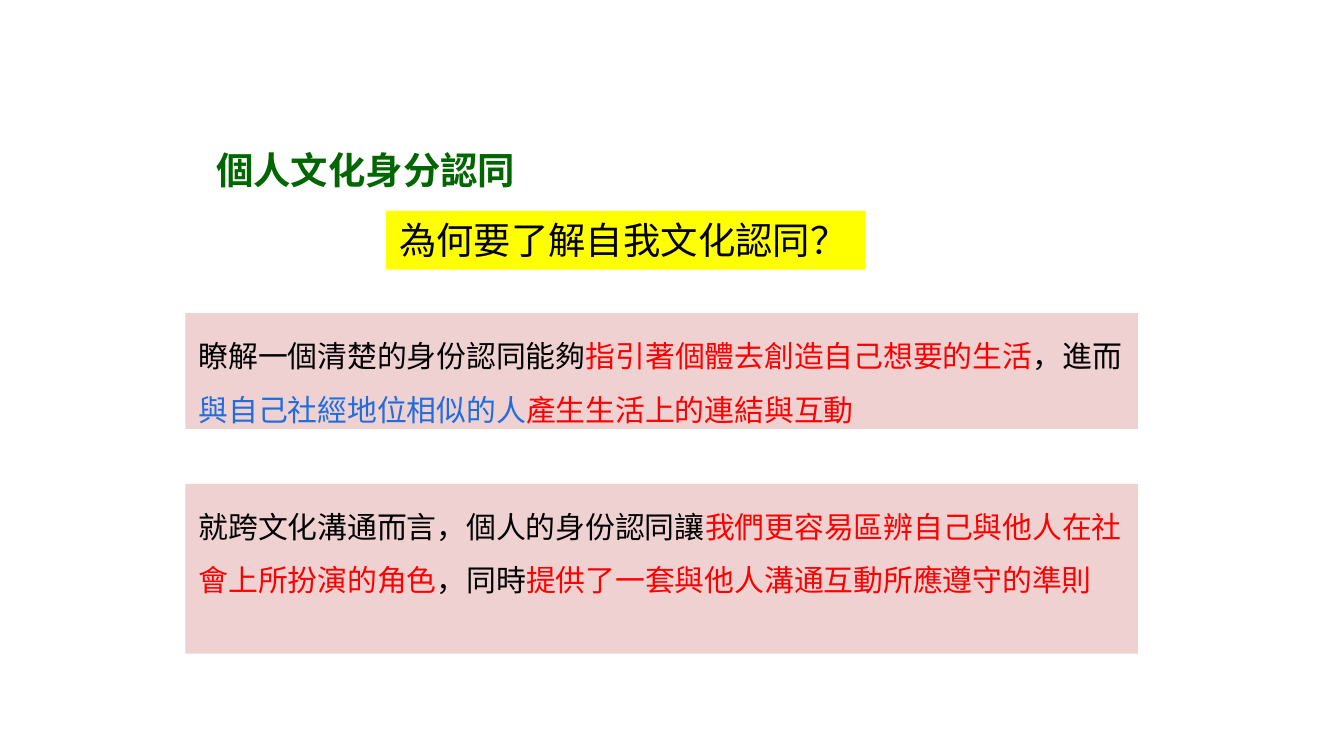
from dataclasses import dataclass

from pptx import Presentation
from pptx.dml.color import RGBColor as Color
from pptx.enum.text import MSO_ANCHOR as Anchor, MSO_AUTO_SIZE as AutoSize
from pptx.util import Pt


@dataclass(frozen=True)
class Theme:
    heading_font: str = "Cambria"
    body_font: str = "Arial"
    heading_size: int = 20
    body_size: int = 16
    green: str = "006600"
    black: str = "000000"
    red: str = "FF0000"
    blue: str = "206DDD"
    pink: str = "EFD1D1"
    yellow: str = "FFFF00"


def add_span(para, text, *, font, size, color, bold=False):
    """Append formatted text to a paragraph."""
    span = para.add_run()
    span.text = text
    span.font.name = font
    span.font.size = Pt(size)
    span.font.bold = bold
    span.font.color.rgb = Color.from_string(color)


class SlideBuilder:
    def __init__(self, page, theme):
        self.page = page
        self.theme = theme

    def text_box(self, left, top, width, height, fill=None):
        box = self.page.shapes.add_textbox(Pt(left), Pt(top), Pt(width), Pt(height))
        if fill:
            box.fill.solid()
            box.fill.fore_color.rgb = Color.from_string(fill)
        box.text_frame.word_wrap = True
        box.text_frame.auto_size = AutoSize.NONE
        return box.text_frame

    def title(self, text, *place):
        frame = self.text_box(*place)
        frame.vertical_anchor = Anchor.MIDDLE
        frame.margin_top = frame.margin_bottom = Pt(7.2)
        add_span(frame.paragraphs[0], text, font=self.theme.heading_font,
                 size=self.theme.heading_size, color=self.theme.green, bold=True)

    def question(self, text, *place):
        frame = self.text_box(*place, fill=self.theme.yellow)
        add_span(frame.paragraphs[0], text, font=self.theme.body_font,
                 size=self.theme.heading_size, color=self.theme.black)

    def answer(self, spans, *place):
        para = self.text_box(*place, fill=self.theme.pink).paragraphs[0]
        para.line_spacing = 1.5
        for text, color in spans:
            add_span(para, text, font=self.theme.body_font,
                     size=self.theme.body_size, color=color)


def main():
    deck = Presentation()
    deck.slide_width, deck.slide_height = Pt(720), Pt(405)
    theme = Theme()
    builder = SlideBuilder(deck.slides.add_slide(deck.slide_layouts[6]), theme)

    # Title
    builder.title("個人文化身分認同", 108.7, 73.5, 536.5, 34.5)

    # Answers, sharing one column
    answer_left, answer_width = 99.3, 510.3
    answers = [
        (167.8, 62, [
            ("瞭解一個清楚的身份認同能夠", theme.black),
            ("指引著個體去創造自己想要的生活", theme.red),
            ("，進而", theme.black),
            ("與自己社經地位相似的人", theme.blue),
            ("產生生活上的連結與互動", theme.red),
        ]),
        (259.2, 91, [
            ("就跨文化溝通而言，個人的身份認同讓", theme.black),
            ("我們更容易區辨自己與他人在社會上所扮演的角色", theme.red),
            ("，同時", theme.black),
            ("提供了一套與他人溝通互動所應遵守的準則", theme.red),
        ]),
    ]
    for top, height, spans in answers:
        builder.answer(spans, answer_left, top, answer_width, height)

    # Highlighted question
    builder.question("為何要了解自我文化認同？", 206.7, 113, 257, 31.5)

    deck.save("out.pptx")


if __name__ == "__main__":
    main()
